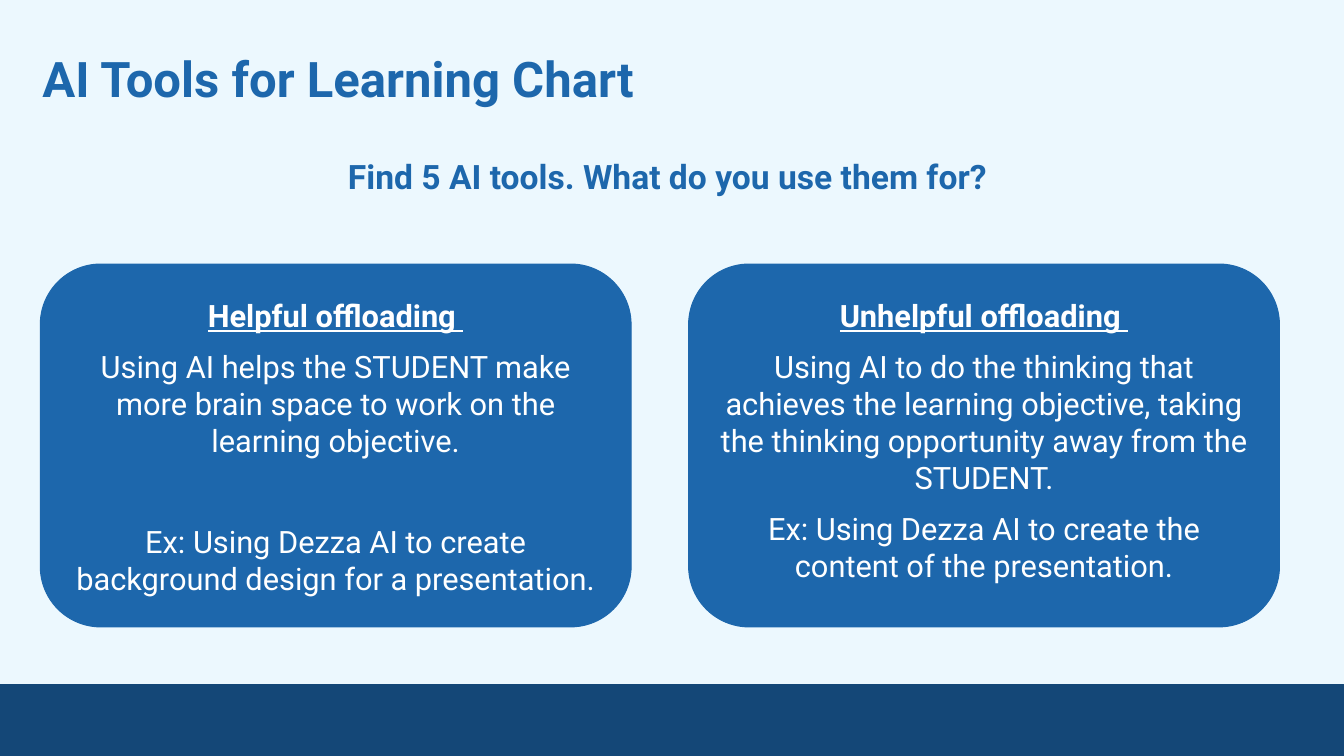
from pptx import Presentation
from pptx.dml.color import RGBColor
from pptx.enum.shapes import MSO_SHAPE as Preset
from pptx.enum.text import MSO_ANCHOR as Anchor, MSO_AUTO_SIZE as AutoSize, PP_ALIGN as Align
from pptx.util import Inches, Pt

BACKGROUND, BLUE, NAVY, WHITE = "ECF8FE", "1D67AC", "144777", "FFFFFF"


def colour(value):
    return RGBColor.from_string(value)


class SlideBuilder:
    """Holds the style and the slide; lengths are percent of the slide's size."""
    font_name = "Roboto"

    def __init__(self, deck):
        self.deck = deck
        self.slide = deck.slides.add_slide(deck.slide_layouts[5])
        fill = self.slide.background.fill
        fill.solid()
        fill.fore_color.rgb = colour(BACKGROUND)

    def place(self, left, top, width, height):
        across, down = self.deck.slide_width / 100, self.deck.slide_height / 100
        return [int(length) for length in (left * across, top * down, width * across, height * down)]

    def frame(self, shape, inset, top_inset=None):
        text = shape.text_frame
        text.word_wrap = True
        text.auto_size = AutoSize.NONE
        text.vertical_anchor = Anchor.TOP
        text.margin_left = text.margin_right = text.margin_bottom = Inches(inset)
        text.margin_top = Inches(top_inset or inset)
        return text

    def set_words(self, paragraph, words, size, ink, align=Align.CENTER, bold=False, underline=False):
        paragraph.text = words
        paragraph.alignment = align
        for run in paragraph.runs:
            font = run.font
            font.name, font.size = self.font_name, Pt(size)
            font.bold, font.underline = bold, underline
            font.color.rgb = colour(ink)

    def title(self, area, words):
        heading = self.slide.shapes.title
        heading.left, heading.top, heading.width, heading.height = self.place(*area)
        text = self.frame(heading, 0.13)
        self.set_words(text.paragraphs[0], words, 35, BLUE, Align.LEFT, bold=True)

    def question(self, area, words):
        box = self.slide.shapes.add_textbox(*self.place(*area))
        self.set_words(self.frame(box, 0.1).paragraphs[0], words, 24, BLUE, bold=True)

    def panel(self, area, fill, preset=Preset.RECTANGLE):
        panel = self.slide.shapes.add_shape(preset, *self.place(*area))
        panel.shadow.inherit = False
        panel.fill.solid()
        panel.fill.fore_color.rgb = colour(fill)
        panel.line.color.rgb = colour(fill)
        panel.line.width = Pt(0.75)
        return panel

    def card(self, area, heading, meaning, example, example_gap):
        card = self.panel(area, BLUE, Preset.ROUNDED_RECTANGLE)
        text = self.frame(card, 0.1, 0.15)
        self.set_words(text.paragraphs[0], heading, 22, WHITE, bold=True, underline=True)
        for words, gap in ((meaning, 10), (example, example_gap)):
            paragraph = text.add_paragraph()
            self.set_words(paragraph, words, 22, WHITE)
            paragraph.space_before = Pt(gap)


def main():
    deck = Presentation()
    deck.slide_width, deck.slide_height = Inches(13.33), Inches(7.5)
    page = SlideBuilder(deck)

    # Footer band, title and question
    page.panel((0, 90.53, 100, 9.47), NAVY)
    page.title((2.18, 4.67, 91.45, 11.47), "AI Tools for Learning Chart")
    page.question((6.83, 19.33, 86.27, 13.47), "Find 5 AI tools. What do you use them for? ")

    # Two kinds of offloading, side by side
    offloading = [
        ("Helpful offloading ",
         "Using AI helps the STUDENT make more brain space to work on the learning objective.",
         "Ex: Using Dezza AI to create background design for a presentation.", 46),
        ("Unhelpful offloading ",
         "Using AI to do the thinking that achieves the learning objective, taking the thinking "
         "opportunity away from the STUDENT.",
         "Ex: Using Dezza AI to create the content of the presentation.", 10),
    ]
    for column, content in enumerate(offloading):
        page.card((3 + column * 48.24, 34.93, 43.96, 48), *content)

    deck.save("out.pptx")


if __name__ == "__main__":
    main()
